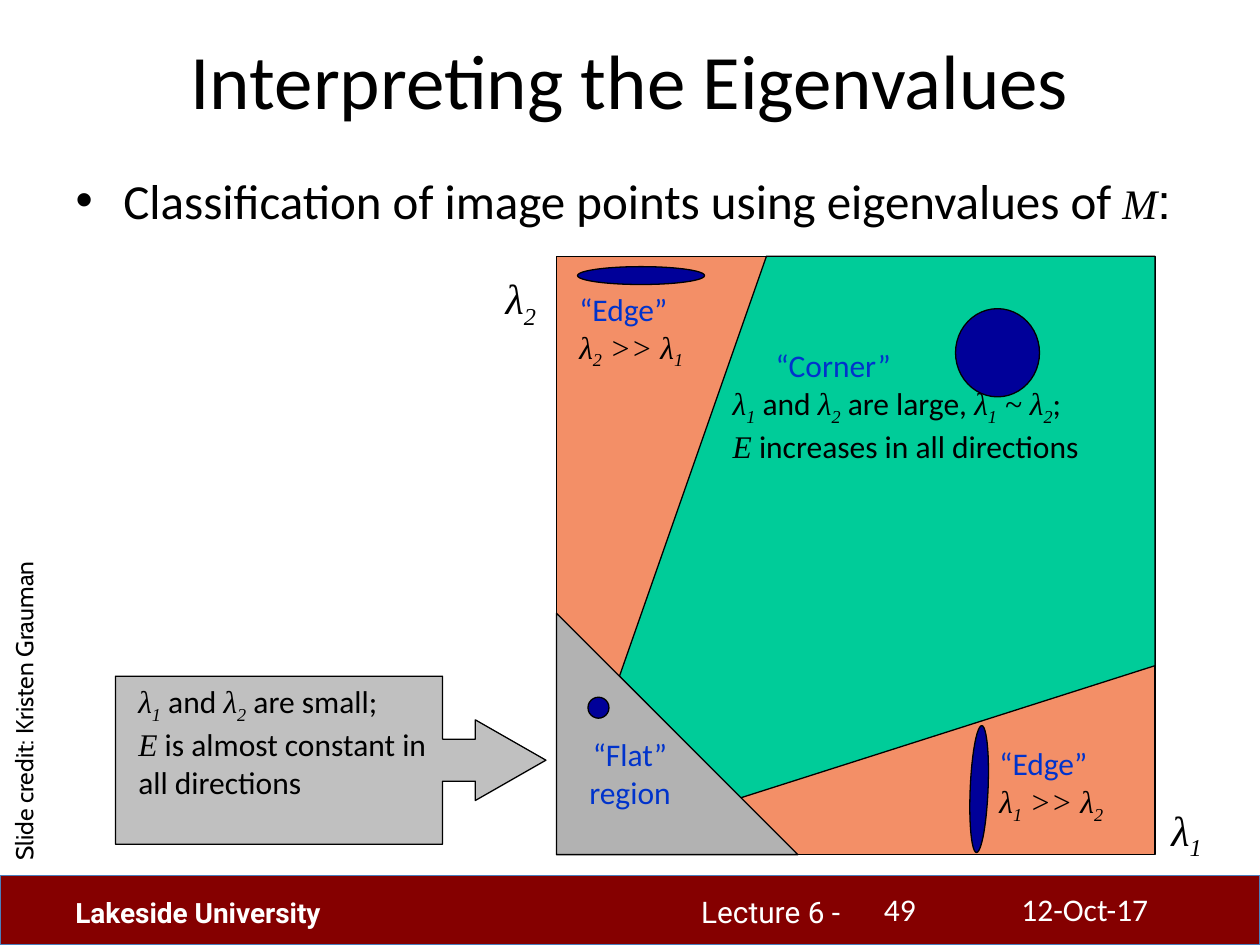
from pptx import Presentation
from pptx.dml.color import RGBColor
from pptx.enum.shapes import MSO_SHAPE as Shape
from pptx.enum.text import MSO_ANCHOR as Anchor, MSO_AUTO_SIZE as AutoSize, PP_ALIGN as Align
from pptx.util import Inches, Pt

COLS, ROWS = 120, 90
BLACK, WHITE, BLUE, NAVY = "000000", "FFFFFF", "0033CC", "000099"
ORANGE, GREEN, GRAY, SILVER, MAROON = "F38F67", "00CC99", "B2B2B2", "C0C0C0", "850000"
SANS, MATH = "Calibri", "Times New Roman"


def rgb(hex_color):
    return RGBColor.from_string(hex_color)


def var(name):
    return name, "italic"


def lam(index):
    return [var("λ"), (index, "sub")]


class Deck:
    """Holds the slide and draws on a grid of COLS by ROWS."""

    def __init__(self):
        self.prs = Presentation()
        self.prs.slide_width, self.prs.slide_height = Inches(10), Inches(7.5)
        self.slide = self.prs.slides.add_slide(self.prs.slide_layouts[1])

    def x(self, cols):
        return int(self.prs.slide_width * cols / COLS)

    def y(self, rows):
        return int(self.prs.slide_height * rows / ROWS)

    def box(self, left, top, width, height):
        return self.x(left), self.y(top), self.x(width), self.y(height)

    def paint(self, sp, fill, line=BLACK):
        sp.shadow.inherit = False
        sp.fill.solid()
        sp.fill.fore_color.rgb = rgb(fill)
        sp.line.color.rgb = rgb(line)
        sp.line.width = Pt(0.75)

    def shape(self, kind, box, fill, line=BLACK, rotation=0, adjust=()):
        sp = self.slide.shapes.add_shape(kind, *self.box(*box))
        sp.rotation = rotation
        for i, value in enumerate(adjust):
            sp.adjustments[i] = value
        self.paint(sp, fill, line)

    def polygon(self, points, fill):
        pts = [(self.x(c), self.y(r)) for c, r in points]
        builder = self.slide.shapes.build_freeform(*pts[0], scale=1.0)
        builder.add_line_segments(pts[1:], close=True)
        self.paint(builder.convert_to_shape(), fill)

    def fill_line(self, p, line, size, color, font=SANS, bold=None, align=Align.LEFT):
        """A line is a string, or a list of strings and (text, style) pairs."""
        p.alignment = align
        p.font.size, p.font.color.rgb, p.font.bold = Pt(size), rgb(color), bold
        for part in [line] if isinstance(line, str) else line:
            text, style = (part, None) if isinstance(part, str) else part
            r = p.add_run()
            r.text = text
            r.font.name = MATH if style else font
            if style:
                r.font.italic = True
            if style == "sub":
                r.font._element.set("baseline", "-25000")

    def text(self, box, lines, size=18, color=BLACK, heading=None, wrap=True,
             rotation=0, **style):
        sp = self.slide.shapes.add_textbox(*self.box(*box))
        sp.rotation = rotation
        tf = sp.text_frame
        tf.word_wrap = wrap
        for i, line in enumerate(lines):
            p = tf.add_paragraph() if i else tf.paragraphs[0]
            line_color = heading if heading and i == 0 else color
            self.fill_line(p, line, size, line_color, **style)
        return tf

    def placeholder(self, index, box, line, size, **style):
        sp = self.slide.placeholders[index]
        sp.left, sp.top, sp.width, sp.height = self.box(*box)
        tf = sp.text_frame
        tf.auto_size = AutoSize.NONE
        self.fill_line(tf.paragraphs[0], line, size, BLACK, **style)
        return tf

    def indent(self, p, left, first=0):
        pPr = p._p.get_or_add_pPr()
        pPr.set("marL", str(Inches(left)))
        pPr.set("indent", str(Inches(first)))


def main():
    deck = Deck()

    # Title and statement
    tf = deck.placeholder(0, (6, 0, 108, 15), "Interpreting the Eigenvalues", 44,
                          align=Align.CENTER)
    tf.vertical_anchor = Anchor.MIDDLE
    tf = deck.placeholder(1, (6, 15.6, 108, 59.4),
                          ["Classification of image points using eigenvalues of ",
                           var("M"), ":"], 28)
    p = tf.paragraphs[0]
    p.runs[1].font.size = Pt(24)
    p.runs[2].font.name = "Arial"
    deck.indent(p, 0.38, -0.38)

    # Footer band
    deck.shape(Shape.RECTANGLE, (0, 83.4, COLS, 6.6), MAROON, "4B7EBC")
    deck.text((65.6, 84.5, 29.3, 4.4), ["Lecture 6 -"], 17, WHITE, font="Roboto")
    deck.text((6, 84.7, 32, 4.4), ["Lakeside University"], 16, WHITE,
              font="Roboto", bold=True)
    deck.text((83, 84.2, 13.2, 4.8), ["49"], color=WHITE)
    deck.text((96.1, 84.2, 20.9, 4.8), ["12-Oct-17"], color=WHITE)

    # Regions of the eigenvalue plane
    deck.shape(Shape.RIGHT_ARROW_CALLOUT, (11, 64.4, 41, 16), SILVER,
               adjust=(0.25, 0.24, 0.42, 0.76))
    deck.shape(Shape.RECTANGLE, (53, 24.4, 57, 57), ORANGE)
    deck.polygon([(59, 64.4), (73, 24.4), (110, 24.4), (110, 63.4), (70.5, 76)], GREEN)
    deck.shape(Shape.RIGHT_TRIANGLE, (53, 58.4, 23, 23), GRAY)

    # Axis names
    for index, box in (("1", (108, 76, 10, 6)), ("2", (42.6, 25.4, 14, 6))):
        deck.text(box, [lam(index)], 24, align=Align.CENTER)

    # Region descriptions
    tf = deck.text((68.6, 32.4, 42.6, 13.3), [
        "“Corner”",
        [*lam("1"), " and ", *lam("2"), " are large, ", *lam("1"), var(" ~ "),
         *lam("2"), ";"],
        [var("E"), " increases in all directions"]], heading=BLUE)
    deck.indent(tf.paragraphs[0], 0.34)
    deck.text((12, 64.4, 31, 13), [
        [*lam("1"), " and ", *lam("2"), " are small;"],
        [var("E"), " is almost constant in all directions"]])
    for large, small, box in (("1", "2", (94, 70.3, 17, 9.2)),
                              ("2", "1", (54, 27, 17, 9.2))):
        deck.text(box, ["“Edge”", [*lam(large), var(" >> "), *lam(small)]], heading=BLUE)
    deck.text((52, 69.4, 16, 9.2), ["“Flat” region"], color=BLUE, align=Align.CENTER)

    # Ellipses showing the eigenvalue ratio
    for box, rotation in (((91, 29.4, 8, 8.4), 0), ((55, 25.4, 12.1, 1.7), 0),
                          ((56, 66.4, 2, 2), 0), ((87.2, 74.3, 12.1, 1.7), 92.4)):
        deck.shape(Shape.OVAL, box, NAVY, rotation=rotation)

    # Credit along the left edge
    deck.text((-14.6, 64.3, 33.7, 4), ["Slide credit: Kristen Grauman"], 14,
              font="Cabin", wrap=False, rotation=270)

    deck.prs.save("out.pptx")


if __name__ == "__main__":
    main()
